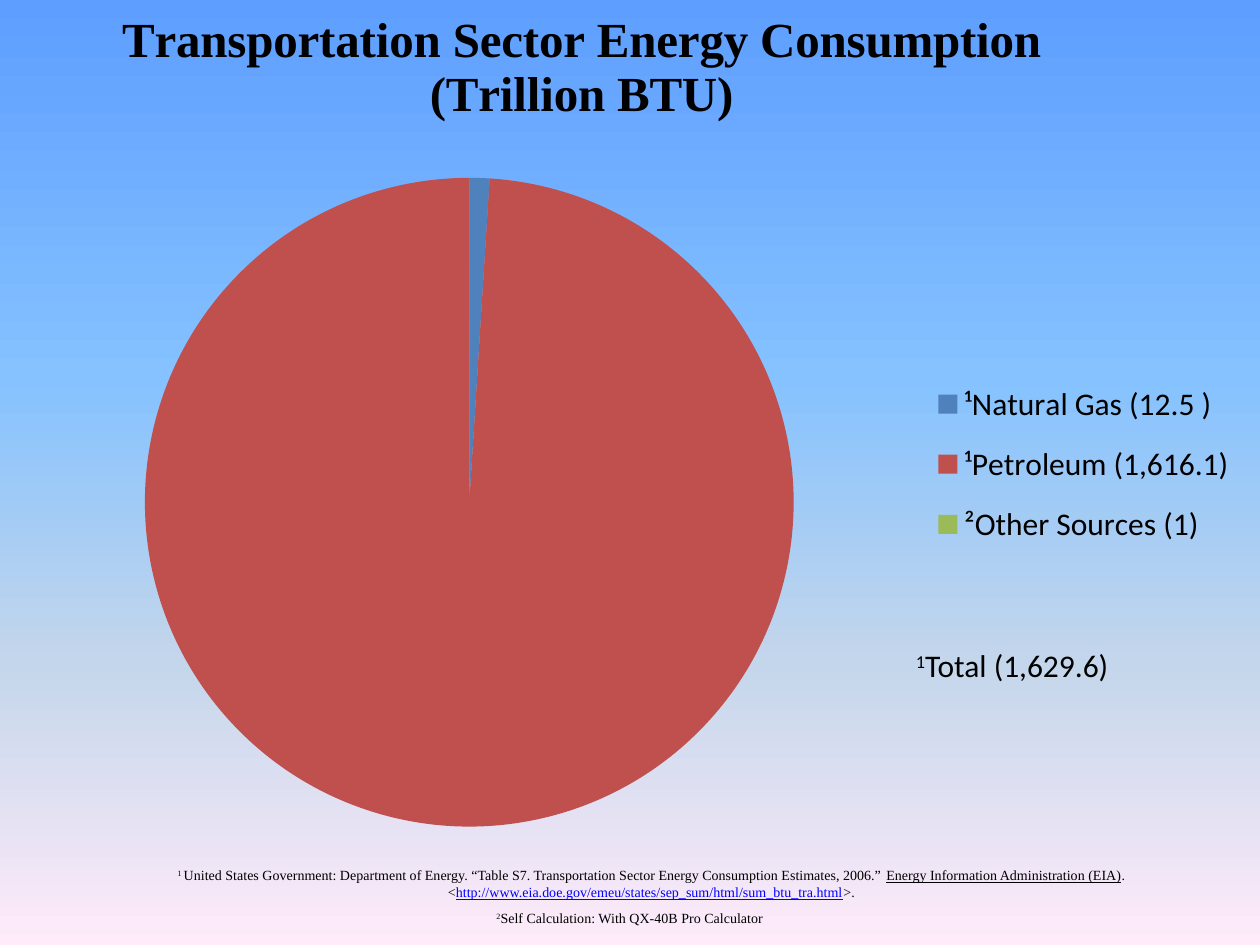
import pptx
import pptx.util
import pptx.chart.data
import pptx.dml.color
import pptx.enum.chart
import pptx.enum.text
import pptx.oxml
import pptx.oxml.ns
from pptx.util import Inches

RGBColor = pptx.dml.color.RGBColor
BLACK = RGBColor(0, 0, 0)
LINK_BLUE = RGBColor(0x00, 0x00, 0xFF)
SLICE_COLORS = [RGBColor(0x4F, 0x81, 0xBD), RGBColor(0xC0, 0x50, 0x4D), RGBColor(0x9B, 0xBB, 0x59)]
SKY_STOPS = [
    (0, RGBColor(0x5E, 0x9E, 0xFF)),
    (40, RGBColor(0x85, 0xC2, 0xFF)),
    (70, RGBColor(0xC4, 0xD6, 0xEB)),
    (100, RGBColor(0xFF, 0xEB, 0xFA)),
]
TITLE = "Transportation Sector Energy Consumption (Trillion BTU)"
SERIF = "Times New Roman"
SANS = "Calibri"


def place(part, index, **fractions):
    for old in part.findall(pptx.oxml.ns.qn("c:layout")):
        part.remove(old)
    target = '<c:layoutTarget val="inner"/>' if part.tag.endswith("plotArea") else ""
    modes = "".join(f'<c:{axis}Mode val="edge"/>' for axis in "xy")
    values = "".join(f'<c:{key} val="{value}"/>' for key, value in fractions.items())
    part.insert(index, pptx.oxml.parse_xml(
        f'<c:layout {pptx.oxml.ns.nsdecls("c")}><c:manualLayout>'
        f'{target}{modes}{values}</c:manualLayout></c:layout>'))


def add_note(bounds, lines, font, size, align, wrap):
    box = page.shapes.add_textbox(*[Inches(value) for value in bounds])
    frame = box.text_frame
    frame.word_wrap = wrap
    frame.auto_size = pptx.enum.text.MSO_AUTO_SIZE.SHAPE_TO_FIT_TEXT
    for number, line in enumerate(lines):
        para = frame.add_paragraph() if number else frame.paragraphs[0]
        para.alignment = align
        for text, style in line:
            span = para.add_run()
            span.text = text
            span.font.name = font
            span.font.size = pptx.util.Pt(size)
            span.font.color.rgb = LINK_BLUE if style == "link" else BLACK
            if style in ("link", "underline"):
                span.font.underline = True
            if style == "super":
                span.font._element.set("baseline", "30000")


deck = pptx.Presentation()
deck.slide_width = Inches(10)
deck.slide_height = Inches(7.5)
page = deck.slides.add_slide(deck.slide_layouts[6])

sky = page.background.fill
sky.gradient()
sky.gradient_angle = 270
stop_list = page.element.xpath(".//a:gsLst")[0]
for old_stop in list(stop_list):
    stop_list.remove(old_stop)
for percent, color in SKY_STOPS:
    stop_list.append(pptx.oxml.parse_xml(
        f'<a:gs {pptx.oxml.ns.nsdecls("a")} pos="{percent * 1000}">'
        f'<a:srgbClr val="{color}"/></a:gs>'))

energy = pptx.chart.data.CategoryChartData()
energy.categories = ["¹Natural Gas (12.5 )", "¹Petroleum (1,616.1)", "²Other Sources (1)"]
energy.add_series(TITLE, [1, 99, 0])
chart = page.shapes.add_chart(
    pptx.enum.chart.XL_CHART_TYPE.PIE, Inches(0), Inches(0), Inches(10), Inches(6.7), energy).chart
chart.font.name = SANS
chart.font.size = pptx.util.Pt(18)
chart.font.color.rgb = BLACK

chart.has_title = True
heading = chart.chart_title.text_frame
heading.text = TITLE
heading_font = heading.paragraphs[0].runs[0].font
heading_font.name = SERIF
heading_font.size = pptx.util.Pt(28)
heading_font.bold = True
heading_font.color.rgb = BLACK

chart.has_legend = True
chart.legend.position = pptx.enum.chart.XL_LEGEND_POSITION.RIGHT
chart.legend.include_in_layout = False

pie = chart.plots[0]
pie.vary_by_categories = True
for index, color in enumerate(SLICE_COLORS):
    slice_fill = pie.series[0].points[index].format.fill
    slice_fill.solid()
    slice_fill.fore_color.rgb = color

place(chart.chart_title._element, 1, x=0.09, y=0)
place(chart._chartSpace.xpath(".//c:plotArea")[0], 0, x=0.115, y=0.21, w=0.515, h=0.77)
place(chart.legend._element, 1, x=0.73, y=0.43, w=0.26, h=0.24)

CENTER = pptx.enum.text.PP_ALIGN.CENTER
add_note((0.17, 6.83, 10, 0.37), [
    [("1 ", "super"),
     ("United States Government: Department of Energy. “Table S7. Transportation Sector "
      "Energy Consumption Estimates, 2006.” ", "plain"),
     ("Energy Information Administration (EIA)", "underline"), (".", "plain")],
    [("<", "plain"),
     ("http://www.eia.doe.gov/emeu/states/sep_sum/html/sum_btu_tra.html", "link"),
     (">.", "plain")],
], SERIF, 8, CENTER, True)
add_note((0, 7.17, 10, 0.24), [
    [("2", "super"), ("Self Calculation: With QX-40B Pro Calculator", "plain")],
], SERIF, 8, CENTER, True)
add_note((7.17, 5.08, 1.8, 0.4), [
    [("1", "super"), ("Total (1,629.6)", "plain")],
], SANS, 18, pptx.enum.text.PP_ALIGN.LEFT, False)

deck.save("out.pptx")
